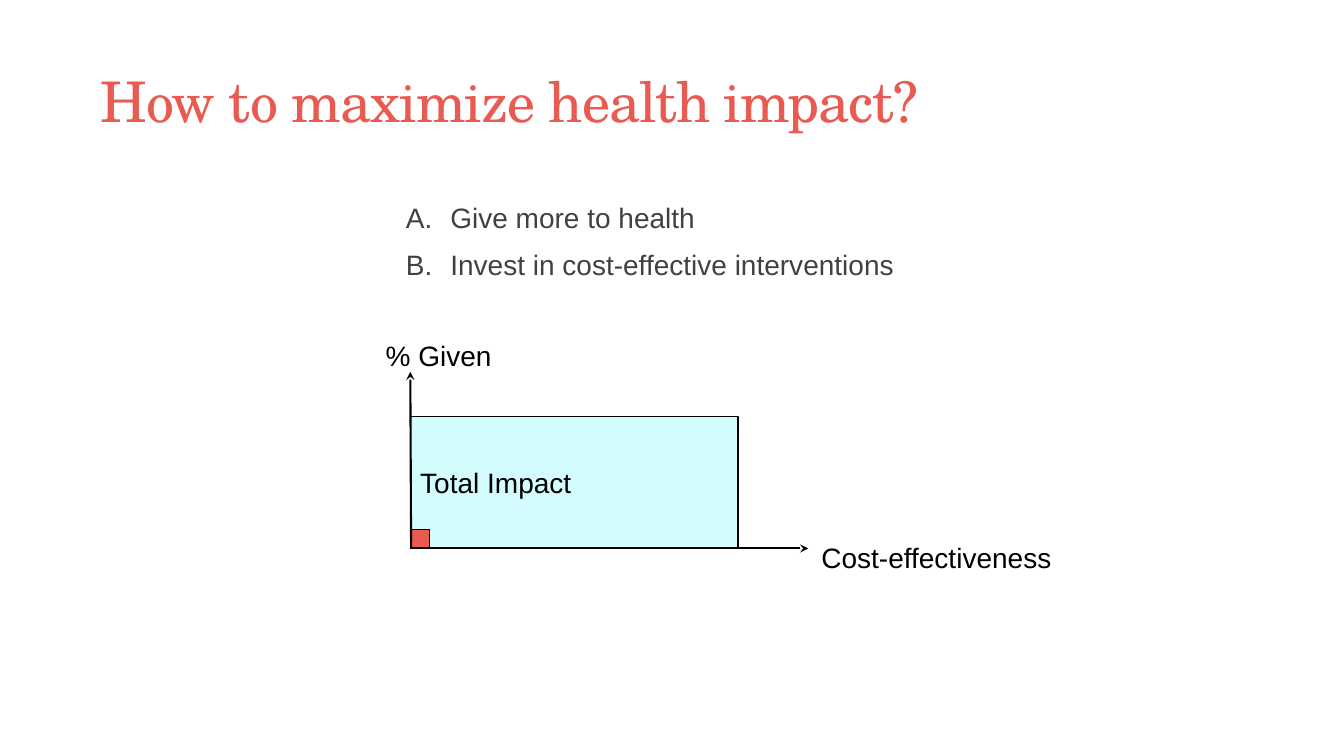
from lxml.etree import SubElement
from pptx import Presentation
from pptx.dml.color import RGBColor
from pptx.enum.shapes import MSO_CONNECTOR as Connector, MSO_SHAPE as Shape
from pptx.enum.text import MSO_ANCHOR as Anchor, PP_ALIGN as Align
from pptx.oxml.ns import qn
from pptx.util import Cm, Pt

COLORS = {"coral": "E95A50", "ice": "D3FCFF", "gray": "414042", "black": "000000"}


def color(name):
    return RGBColor.from_string(COLORS[name])


def format_paragraph(paragraph, size=20, font="Arial", ink="black"):
    paragraph.alignment = Align.LEFT
    for run in paragraph.runs:
        run.font.size = Pt(size)
        run.font.name = font
        run.font.color.rgb = color(ink)


def add_text(slide, box, text, margin=None, wrap=True):
    shape = slide.shapes.add_textbox(*(Cm(length) for length in box))
    frame = shape.text_frame
    frame.word_wrap = wrap
    if margin is not None:
        frame.margin_left = frame.margin_right = Cm(margin)
        frame.margin_top = frame.margin_bottom = Cm(margin)
    frame.text = text
    return frame


def add_title(slide, box, text):
    frame = add_text(slide, box, text, margin=0)
    frame.vertical_anchor = Anchor.BOTTOM
    paragraph = frame.paragraphs[0]
    paragraph.line_spacing = Pt(41)
    format_paragraph(paragraph, 40, "TeX Gyre Schola", "coral")
    paragraph.runs[0].font._element.set("spc", "-70")


def add_lettered_list(slide, box, items):
    frame = add_text(slide, box, "\n".join(items), margin=0)
    for index, paragraph in enumerate(frame.paragraphs):
        properties = paragraph._p.get_or_add_pPr()
        properties.set("marL", str(Cm(1.9)))
        properties.set("indent", str(Cm(-1.12)))
        SubElement(properties, qn("a:buFont"), typeface="Arial")
        SubElement(properties, qn("a:buAutoNum"), type="alphaUcPeriod")
        if index:
            paragraph.space_before = Pt(9.5)
        format_paragraph(paragraph, ink="gray")


def add_area(slide, left, bottom, width, height, fill):
    """Rectangle standing on the horizontal axis."""
    shape = slide.shapes.add_shape(
        Shape.RECTANGLE, Cm(left), Cm(bottom - height), Cm(width), Cm(height))
    shape.shadow.inherit = False
    shape.fill.solid()
    shape.fill.fore_color.rgb = color(fill)
    shape.line.color.rgb = color("black")
    shape.line.width = Pt(0.75)
    return shape


def add_axis(slide, start, end):
    axis = slide.shapes.add_connector(
        Connector.STRAIGHT, *(Cm(length) for length in (*start, *end)))
    axis.line.color.rgb = color("black")
    axis.line.width = Pt(1.5)
    SubElement(axis.line._get_or_add_ln(), qn("a:tailEnd"), type="stealth")
    SubElement(axis._element.spPr, qn("a:effectLst"))


def add_impact_diagram(slide, box):
    left, top, width, height = box
    bottom = top + height

    # Areas: total impact and the small starting square
    total = add_area(slide, left, bottom, 8.26, 3.33, "ice")
    frame = total.text_frame
    frame.word_wrap = False
    frame.vertical_anchor = Anchor.MIDDLE
    frame.text = "Total Impact"
    format_paragraph(frame.paragraphs[0])
    add_area(slide, left, bottom, 0.48, 0.48, "coral")

    # Axes
    origin = (left + 0.02, bottom)
    add_axis(slide, origin, (left, top))
    add_axis(slide, origin, (left + width, bottom))

    # Axis labels
    for label_box, text in (
        ((left - 0.87, top - 0.96, 3.2, 1.11), "% Given"),
        ((left + width + 0.08, bottom - 0.33, 6.35, 1.11), "Cost-effectiveness"),
    ):
        label = add_text(slide, label_box, text, wrap=False)
        format_paragraph(label.paragraphs[0])


def main():
    presentation = Presentation()
    presentation.slide_width = Cm(33.87)
    presentation.slide_height = Cm(19.05)
    slide = presentation.slides.add_slide(presentation.slide_layouts[6])

    add_lettered_list(slide, (9.45, 5.05, 16.2, 8.58), (
        "Give more to health", "Invest in cost-effective interventions"))
    add_impact_diagram(slide, (10.34, 9.37, 10.03, 4.45))
    add_title(slide, (2.54, 0.97, 22.07, 2.39), "How to maximize health impact?")

    presentation.save("out.pptx")


if __name__ == "__main__":
    main()
